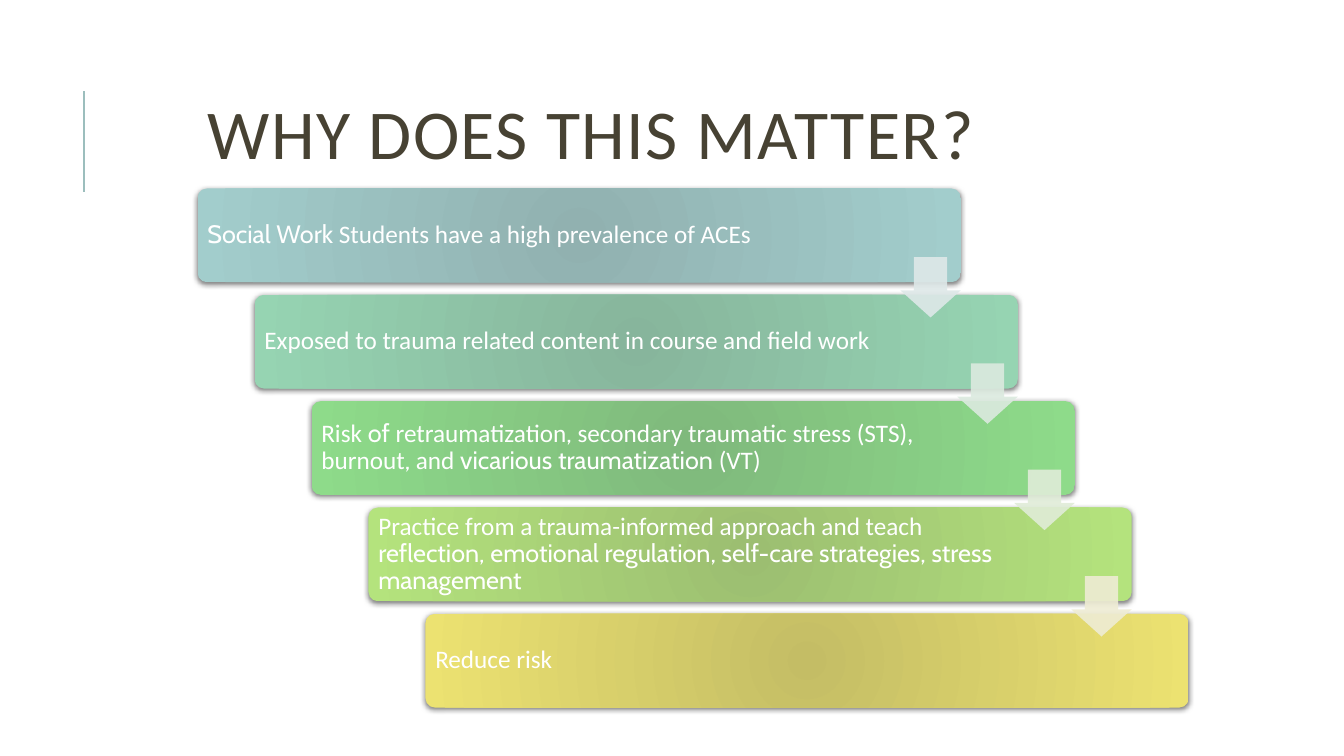
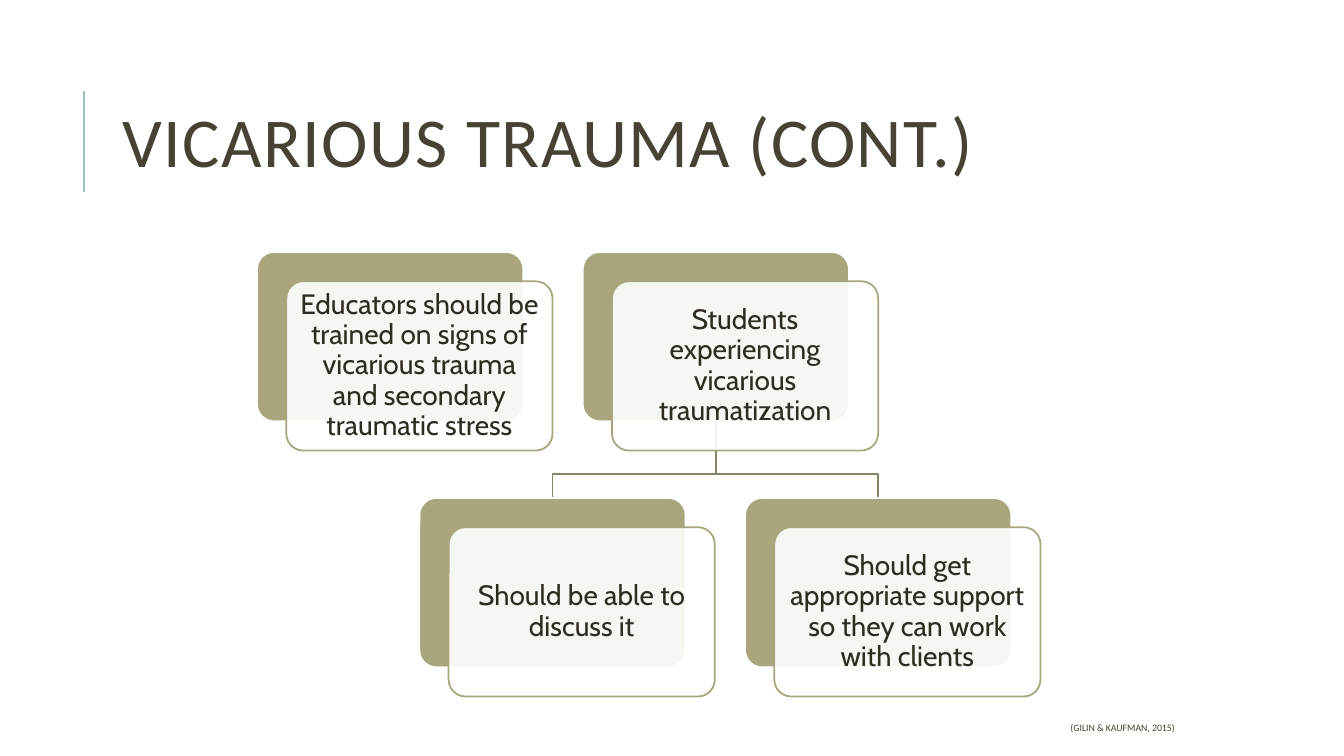
from lxml import etree
from pptx import Presentation
from pptx.dml.color import RGBColor
from pptx.enum.shapes import MSO_CONNECTOR, MSO_SHAPE
from pptx.enum.text import MSO_ANCHOR, PP_ALIGN
from pptx.oxml.ns import qn
from pptx.util import Inches, Pt

ROUND, DOWN = MSO_SHAPE.ROUNDED_RECTANGLE, MSO_SHAPE.DOWN_ARROW
STRAIGHT = MSO_CONNECTOR.STRAIGHT
MIDDLE = MSO_ANCHOR.MIDDLE
LEFT, CENTER, RIGHT = PP_ALIGN.LEFT, PP_ALIGN.CENTER, PP_ALIGN.RIGHT

WHITE = RGBColor(0xFF, 0xFF, 0xFF)
BLACK = RGBColor(0x00, 0x00, 0x00)
TITLE = RGBColor(0x47, 0x42, 0x33)
RULE = RGBColor(0x9C, 0xBE, 0xBD)
KHAKI = RGBColor(0xA9, 0xA5, 0x7C)
LINK = RGBColor(0x87, 0x84, 0x63)
INK = RGBColor(0x2E, 0x2B, 0x21)

CAL, CAB = "Calibri", "Cabin"


def style(shape, fill, line, width, alpha=100):
    shape.shadow.inherit = False
    if fill is None:
        shape.fill.background()
    else:
        shape.fill.solid()
        shape.fill.fore_color.rgb = fill
    if line is None:
        shape.line.fill.background()
    else:
        shape.line.color.rgb = line
        shape.line.width = Pt(width)
    if alpha < 100:
        clr = shape._element.spPr.find(qn("a:solidFill")).find(qn("a:srgbClr"))
        etree.SubElement(clr, qn("a:alpha"), val=str(alpha * 1000))


def write(shape, runs, size, color, align, spacing=0.9, **margins):
    tf = shape.text_frame
    frame = {"word_wrap": True, "vertical_anchor": MIDDLE}
    for name, value in frame.items():
        setattr(tf, name, value)
    for side, value in margins.items():
        setattr(tf, f"margin_{side}", Inches(value))
    p = tf.paragraphs[0]
    p.alignment, p.line_spacing = align, spacing
    for text, font in runs:
        r = p.add_run()
        r.text = text
        for name, value in {"name": font, "size": Pt(size)}.items():
            setattr(r.font, name, value)
        r.font.color.rgb = color
    return p


prs = Presentation()
prs.slide_width, prs.slide_height = Inches(13.33), Inches(7.5)

TITLES = [
    ("WHY DOES THIS MATTER?", 1.96, 0.68, 10.62, 1.4),
    ("VICARIOUS TRAUMA (CONT.)", 1.12, 0.64, 10.63, 1.64),
]
slides = []
for text, *box in TITLES:
    s = prs.slides.add_slide(prs.slide_layouts[6])
    rule = s.shapes.add_connector(
        STRAIGHT, Inches(0.83), Inches(1.9), Inches(0.83), Inches(0.9))
    rule.line.color.rgb = RULE
    rule.line.width = Pt(1.5)
    etree.SubElement(rule._element.spPr, qn("a:effectLst"))
    sp = s.shapes.add_textbox(*map(Inches, box))
    p = write(sp, [(text, CAL)], 50, TITLE, LEFT, 0.8)
    p.runs[0].font._element.set("spc", "100")
    slides.append(s)
matter, vicarious = slides

STEPS = [
    ("91B1B0", "A2CDCC", [
        ("Social Work ", CAB),
        ("Students have a high prevalence of ACEs", CAL)]),
    ("87B59C", "96D4B2", [
        ("Exposed to trauma related content in course and field work", CAL)]),
    ("7FB97C", "8EDB8A", [
        ("Risk", CAL), (" of ", CAB), ("retraumatization", CAL), (", ", CAB),
        ("secondary traumatic stress (STS), burnout", CAL), (", ", CAB),
        ("and ", CAL), ("vicarious traumatization", CAB), (" (VT)", CAL)]),
    ("9CBE71", "B4E37D", [
        ("Practice from a trauma-informed approach and teach", CAL),
        (" reflection, emotional regulation, self-care strategies, "
         "stress management", CAB)]),
    ("C4BD65", "ECE271", [("Reduce risk", CAL)]),
]
ARROWS = ["DEE8E8", "DBEADF", "E0ECD8", "EEECD4"]
GAPS = len(STEPS) - 1
places = [(1.96 + 2.26 * i / GAPS, 1.87 + 4.22 * i / GAPS)
          for i in range(len(STEPS))]

for (x, y), (inner, outer, runs) in zip(places, STEPS):
    sp = matter.shapes.add_shape(
        ROUND, Inches(x), Inches(y), Inches(7.57), Inches(0.93))
    sp.adjustments[0] = 0.1
    style(sp, None, None, 0)
    sp.fill.gradient()
    for stop, color in zip(sp.fill.gradient_stops, (inner, outer)):
        stop.color.rgb = RGBColor.from_string(color)
    spPr = sp._element.spPr
    grad = spPr.find(qn("a:gradFill"))
    grad.remove(grad.find(qn("a:lin")))
    focus = etree.SubElement(grad, qn("a:path"), {"path": "circle"})
    etree.SubElement(focus, qn("a:fillToRect"), dict.fromkeys("ltrb", "100000"))
    shadow = etree.SubElement(
        spPr.find(qn("a:effectLst")), qn("a:outerShdw"),
        blurRad=str(Pt(4)), dist=str(Pt(1)), dir="5400000", rotWithShape="0")
    clr = etree.SubElement(shadow, qn("a:srgbClr"), val=str(BLACK))
    etree.SubElement(clr, qn("a:alpha"), val="50000")
    write(sp, runs, 18, WHITE, LEFT, left=0.07, right=1.23, top=0.07, bottom=0.07)

for (x, y), color in zip(places, ARROWS):
    sp = matter.shapes.add_shape(
        DOWN, Inches(x + 6.97), Inches(y + 0.68), Inches(0.6), Inches(0.6))
    sp.adjustments[0], sp.adjustments[1] = 0.55, 0.45
    style(sp, RGBColor.from_string(color), None, 0, 90)

sp = vicarious.shapes.add_textbox(
    Inches(5.3), Inches(7.08), Inches(6.45), Inches(0.3))
write(sp, [("(GILIN & KAUFMAN, 2015)", CAL)], 7, TITLE, RIGHT)

CARD_W, CARD_H = 2.64, 1.68
TOP_ROW, LOW_ROW = 2.5, 4.94
CARDS = [
    (2.55, TOP_ROW, "Educators should be trained on signs of vicarious trauma "
                    "and secondary traumatic stress"),
    (5.78, TOP_ROW, "Students experiencing vicarious traumatization"),
    (4.16, LOW_ROW, "Should be able to discuss it"),
    (7.39, LOW_ROW, "Should get appropriate support so they can work "
                    "with clients"),
]
parent, *children = [x + CARD_W / 2 for x, y, text in CARDS[1:]]
for child in reversed(children):
    path = [(parent, 4.7), (child, 4.7), (child, LOW_ROW)]
    fb = vicarious.shapes.build_freeform(
        Inches(parent), Inches(TOP_ROW + CARD_H))
    fb.add_line_segments([(Inches(x), Inches(y)) for x, y in path], close=False)
    style(fb.convert_to_shape(), None, LINK, 1.25)

for x, y, text in CARDS:
    for shift, fill, line, alpha in ((0, KHAKI, WHITE, 100),
                                     (0.29, WHITE, KHAKI, 90)):
        sp = vicarious.shapes.add_shape(
            ROUND, Inches(x + shift), Inches(y + shift),
            Inches(CARD_W), Inches(CARD_H))
        sp.adjustments[0] = 0.1
        style(sp, fill, line, 1.25, alpha)
    write(sp, [(text, CAB)], 20, INK, CENTER,
          left=0.08, right=0.08, top=0.08, bottom=0.08)

prs.save("out.pptx")
